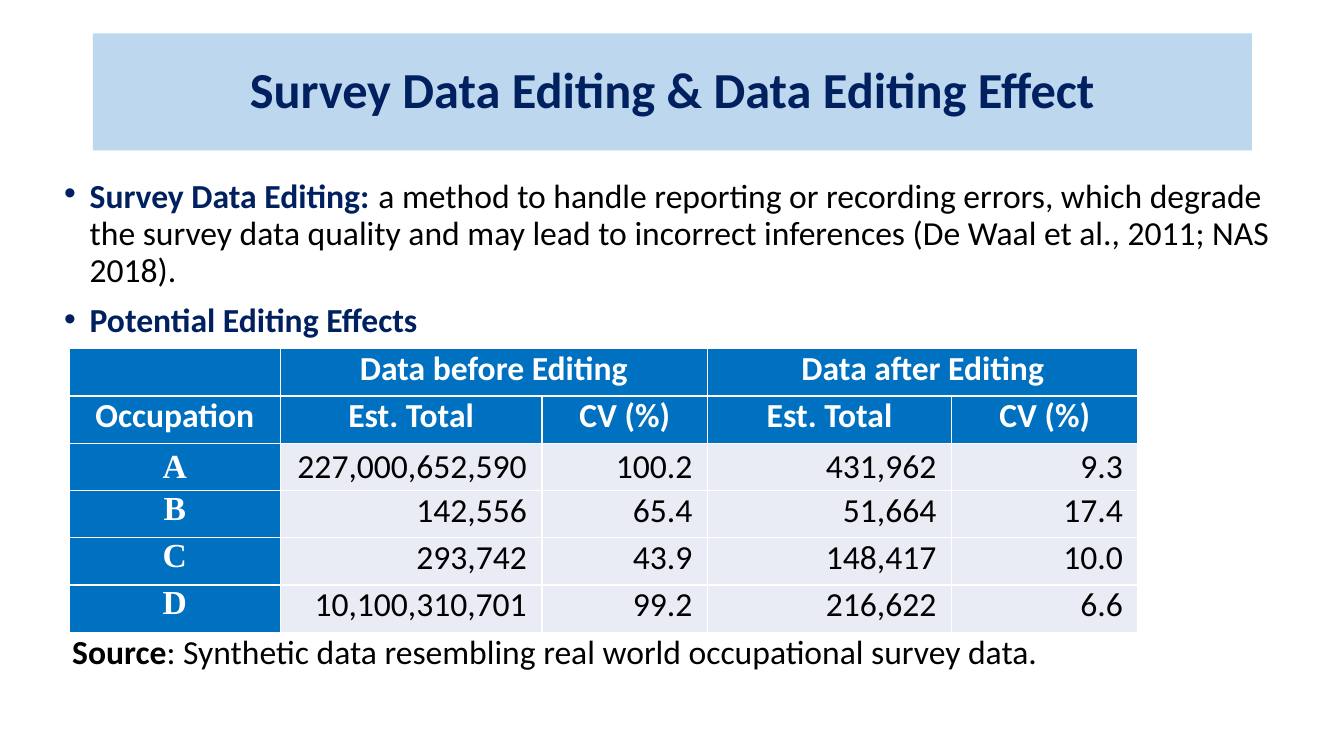
from lxml.etree import SubElement
from pptx import Presentation
from pptx.dml.color import RGBColor
from pptx.enum.shapes import MSO_SHAPE as Shape
from pptx.enum.text import MSO_ANCHOR as Anchor, PP_ALIGN as Align
from pptx.oxml.ns import qn
from pptx.util import Cm, Pt

NAVY = RGBColor(0x00, 0x20, 0x60)
BLACK = RGBColor(0x00, 0x00, 0x00)
WHITE = RGBColor(0xFF, 0xFF, 0xFF)
SKY = RGBColor(0xBD, 0xD7, 0xEE)
BLUE = RGBColor(0x00, 0x70, 0xC0)
PALE = RGBColor(0xE9, 0xEB, 0xF5)

# Content
HEADING = "Survey Data Editing & Data Editing Effect"
DEFINITION = (
    "a method to handle reporting or recording errors, which degrade the survey data "
    "quality and may lead to incorrect inferences (De Waal et al., 2011; NAS 2018)."
)
PERIODS = ["Data before Editing", "Data after Editing"]
MEASURES = ["Occupation", "Est. Total", "CV (%)", "Est. Total", "CV (%)"]
ESTIMATES = [
    ("A", "227,000,652,590", "100.2", "431,962", "9.3"),
    ("B", "142,556", "65.4", "51,664", "17.4"),
    ("C", "293,742", "43.9", "148,417", "10.0"),
    ("D", "10,100,310,701", "99.2", "216,622", "6.6"),
]
COLUMN_WIDTHS = [5.31, 6.6, 4.17, 6.15, 4.7]
ROW_HEIGHT = 1.19

# Font formats
TITLE = {"name": "Calibri", "size": Pt(36), "bold": True, "color": NAVY}
TERM = TITLE | {"size": Pt(24)}
PLAIN = TERM | {"bold": False, "color": BLACK}
GAP = PLAIN | {"size": Pt(28)}
STRONG = PLAIN | {"bold": True}
HEADER = TERM | {"color": WHITE}
LABEL = HEADER | {"name": "Times New Roman"}

BULLETS = [
    [("Survey Data Editing:", TERM), (" ", GAP), (DEFINITION, PLAIN)],
    [("Potential Editing Effects", TERM)],
]
SOURCE = [("Source", STRONG), (": Synthetic data resembling real world occupational survey data.", PLAIN)]


def write(paragraph, runs, **layout):
    for attribute, value in layout.items():
        setattr(paragraph, attribute, value)
    for words, look in runs:
        run = paragraph.add_run()
        run.text = words
        for attribute, value in look.items():
            if attribute == "color":
                run.font.color.rgb = value
            else:
                setattr(run.font, attribute, value)


def add_bullet(paragraph):
    properties = paragraph._p.get_or_add_pPr()
    properties.set("marL", str(Cm(0.64)))
    properties.set("indent", str(Cm(-0.64)))
    SubElement(properties, qn("a:buFont"), typeface="Arial")
    SubElement(properties, qn("a:buChar"), char="•")


def fill_cell(cell, words, look, colour, align=Align.CENTER, right=0.19, anchor=Anchor.TOP):
    layout = {"margin_left": Cm(0.19), "margin_right": Cm(right), "margin_top": 0,
              "margin_bottom": 0, "vertical_anchor": anchor}
    for attribute, value in layout.items():
        setattr(cell, attribute, value)
    properties = cell._tc.get_or_add_tcPr()
    for side in ("lnL", "lnR", "lnT", "lnB"):
        line = SubElement(properties, qn(f"a:{side}"), w=str(Pt(1)))
        SubElement(SubElement(line, qn("a:solidFill")), qn("a:srgbClr"), val=str(WHITE))
    cell.fill.solid()
    cell.fill.fore_color.rgb = colour
    if words:
        write(cell.text_frame.paragraphs[0], [(words, look)], alignment=align)


deck = Presentation()
deck.slide_width, deck.slide_height = Cm(33.87), Cm(19.05)
slide = deck.slides.add_slide(deck.slide_layouts[6])

# Title band
band = slide.shapes.add_shape(Shape.RECTANGLE, Cm(2.34), Cm(0.84), Cm(29.21), Cm(2.95))
band.shadow.inherit = False
band.fill.solid()
band.fill.fore_color.rgb = SKY
band.line.fill.background()
band.text_frame.word_wrap = True
band.text_frame.vertical_anchor = Anchor.MIDDLE
write(band.text_frame.paragraphs[0], [(HEADING, TITLE)], alignment=Align.CENTER, line_spacing=0.9)

# Bulleted text
body = slide.shapes.add_textbox(Cm(1.37), Cm(4.27), Cm(31.06), Cm(4.4)).text_frame
body.word_wrap = True
for number, runs in enumerate(BULLETS):
    bullet = body.add_paragraph() if number else body.paragraphs[0]
    write(bullet, runs, line_spacing=0.9, space_before=Pt(10))
    add_bullet(bullet)

# Table of estimates
row_count = len(ESTIMATES) + 2
effects = slide.shapes.add_table(
    row_count, len(COLUMN_WIDTHS), Cm(1.75), Cm(8.79),
    Cm(sum(COLUMN_WIDTHS)), Cm(ROW_HEIGHT * row_count)).table
for column, width in zip(effects.columns, COLUMN_WIDTHS):
    column.width = Cm(width)
for row in effects.rows:
    row.height = Cm(ROW_HEIGHT)

period_row = ["", PERIODS[0], "", PERIODS[1], ""]
for r, headings in enumerate([period_row, MEASURES]):
    for c, words in enumerate(headings):
        fill_cell(effects.cell(r, c), words, HEADER, BLUE)
for first in (1, 3):
    effects.cell(0, first).merge(effects.cell(0, first + 1))

for r, (occupation, *figures) in enumerate(ESTIMATES, start=2):
    anchor = Anchor.MIDDLE if r == 2 else Anchor.TOP
    fill_cell(effects.cell(r, 0), occupation, LABEL, BLUE, anchor=anchor)
    for c, figure in enumerate(figures, start=1):
        fill_cell(effects.cell(r, c), figure, PLAIN, PALE, Align.RIGHT, 0.38, anchor)

# Source line
note = slide.shapes.add_textbox(Cm(1.57), Cm(15.9), Cm(30.8), Cm(1.2)).text_frame
note.word_wrap = True
write(note.paragraphs[0], SOURCE, line_spacing=0.9)

deck.save("out.pptx")
